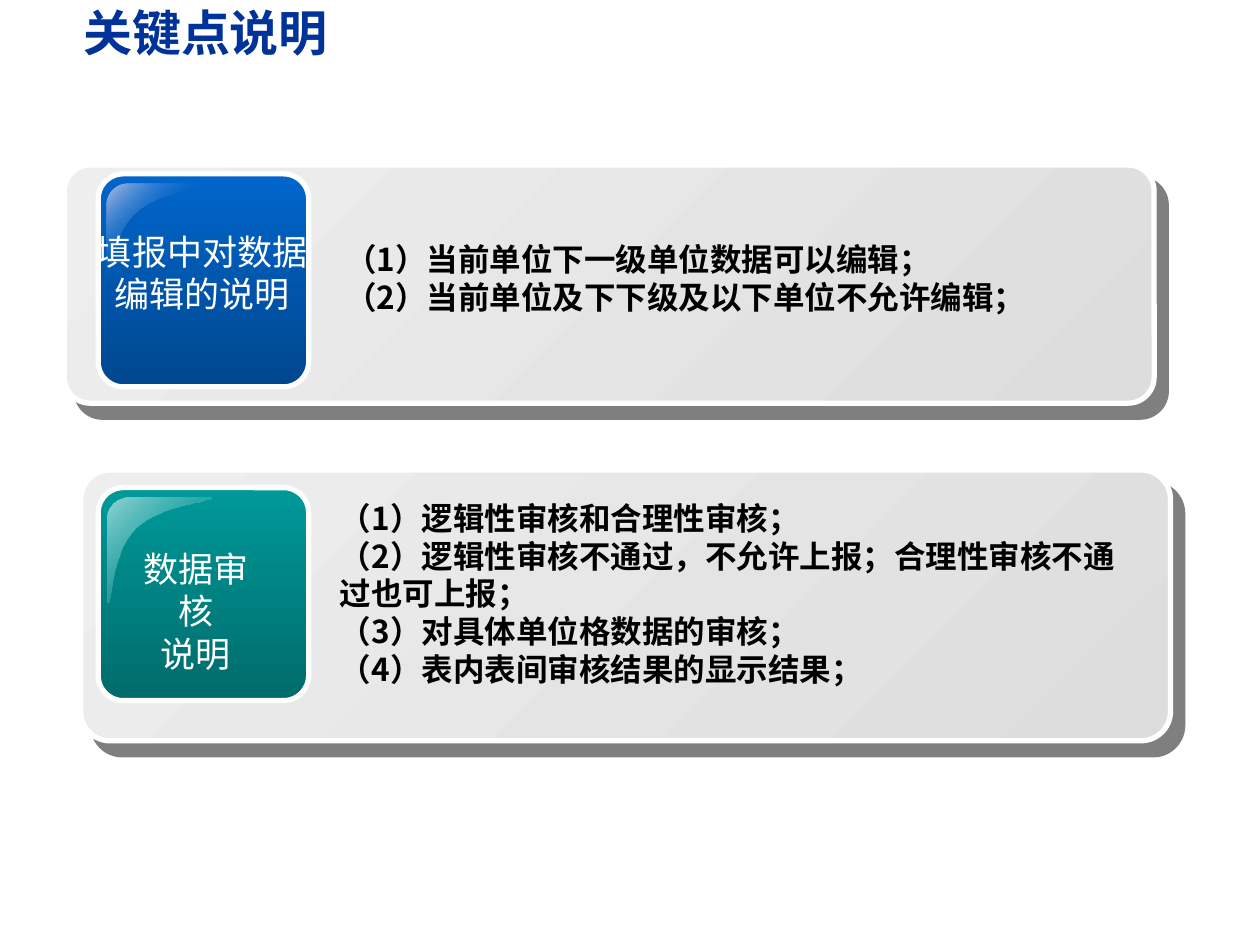
from dataclasses import dataclass

from lxml.etree import SubElement
from pptx import Presentation
from pptx.dml.color import RGBColor
from pptx.enum.shapes import MSO_SHAPE as Preset
from pptx.enum.text import MSO_ANCHOR as Anchor, PP_ALIGN as Align
from pptx.oxml.ns import qn
from pptx.util import Inches, Pt

CJK_FONT = "Noto Sans CJK SC"
TILE_LEFT, TILE_WIDTH, TILE_HEIGHT = 0.78, 1.67, 1.69
GLOSS_LEFT, GLOSS_DROP = 0.85, 0.08
# Highlight outline: a start point, then cubic curves as (control, control, end).
GLOSS_START = (0.17, 0)
GLOSS_CURVES = [
    ((0.08, 0), (0, 0.07), (0, 0.17)),
    ((0, 0.17), (0, 0.83), (0, 0.83)),
    ((0.04, 0.85), (0.02, 0.44), (0.23, 0.24)),
    ((0.44, 0.05), (0.84, 0.04), (0.83, 0)),
]


@dataclass
class TextArea:
    left: float
    top: float
    width: float
    height: float
    lines: list[str]


@dataclass
class Panel:
    left: float
    top: float
    height: float
    tile_top: float
    tile_colors: tuple[str, str]
    gloss_color: str
    gloss_end: float
    label: TextArea
    notes: TextArea


PANELS = [
    Panel(0.51, 1.31, 1.89, 1.38, ("0066CC", "00478E"), "B5C0E5", 0.5,
          TextArea(0.67, 1.78, 1.87, 0.77, ["填报中对数据", "编辑的说明"]),
          TextArea(2.64, 1.86, 6.62, 0.7, [
              "（1）当前单位下一级单位数据可以编辑；",
              "（2）当前单位及下下级及以下单位不允许编辑；"])),
    Panel(0.64, 3.73, 2.15, 3.87, ("009999", "006B6B"), "93D4D4", 1,
          TextArea(0.95, 4.3, 1.21, 0.77, ["数据审核", "说明"]),
          TextArea(2.6, 3.91, 6.47, 1.6, [
              "（1）逻辑性审核和合理性审核；",
              "（2）逻辑性审核不通过，不允许上报；合理性审核不通过也可上报；",
              "（3）对具体单位格数据的审核；",
              "（4）表内表间审核结果的显示结果；"])),
]


def rgb(value: str) -> RGBColor:
    return RGBColor.from_string(value)


def set_gradient(shape, colors: tuple[str, str], angle: float) -> None:
    """Fill from the first colour to the second, angle clockwise in degrees."""
    shape.fill.gradient()
    shape.fill.gradient_angle = 360 - angle
    for stop, color, position in zip(shape.fill.gradient_stops, colors, (0, 1)):
        stop.color.rgb = rgb(color)
        stop.position = position


def add_shadow(shape) -> None:
    effects = SubElement(shape._element.spPr, qn("a:effectLst"))
    shadow = SubElement(effects, qn("a:outerShdw"), dist=str(Pt(10.6)),
                        dir=str(49 * 60000), algn="ctr", rotWithShape="0")
    color = SubElement(shadow, qn("a:srgbClr"), val="000000")
    SubElement(color, qn("a:alpha"), val="50000")


def add_card(page, left: float, top: float, width: float, height: float,
             corner: float, colors: tuple[str, str], angle: float, line: str):
    card = page.shapes.add_shape(Preset.ROUNDED_RECTANGLE, Inches(left), Inches(top),
                                 Inches(width), Inches(height))
    card.adjustments[0] = corner
    set_gradient(card, colors, angle)
    card.line.color.rgb = rgb(line)
    card.line.width = Pt(3)
    return card


def gloss_points(left: float, top: float, steps: int = 16) -> list[tuple[int, int]]:
    """Sample the highlight's curves as points in slide units."""
    points, start = [GLOSS_START], GLOSS_START
    for first, second, end in GLOSS_CURVES:
        for step in range(1, steps + 1):
            t = step / steps
            weights = ((1 - t) ** 3, 3 * t * (1 - t) ** 2, 3 * t * t * (1 - t), t ** 3)
            corners = (start, first, second, end)
            points.append(tuple(sum(w * c[axis] for w, c in zip(weights, corners))
                                for axis in (0, 1)))
        start = end
    return [(Inches(left + x), Inches(top + y)) for x, y in points]


def add_gloss(page, panel: Panel) -> None:
    """Draw the highlight that fades into the tile's upper left corner."""
    points = gloss_points(GLOSS_LEFT, panel.tile_top + GLOSS_DROP)
    builder = page.shapes.build_freeform(*points[0])
    builder.add_line_segments(points[1:], close=True)
    gloss = builder.convert_to_shape()
    set_gradient(gloss, (panel.gloss_color, panel.tile_colors[0]), 45)
    gloss.fill.gradient_stops[1].position = panel.gloss_end
    clear_color = gloss._element.spPr.findall(".//" + qn("a:srgbClr"))[1]
    SubElement(clear_color, qn("a:alpha"), val="0")
    gloss.line.fill.background()
    gloss.shadow.inherit = False


def format_paragraph(para, size: float, color: str, bold: bool, latin: str = CJK_FONT) -> None:
    for span in para.runs:
        font = span.font
        font.name, font.size, font.bold = latin, Pt(size), bold
        font.color.rgb = rgb(color)
        SubElement(span._r.get_or_add_rPr(), qn("a:ea"), typeface=CJK_FONT)


def add_text(page, area: TextArea, size: float, color: str, bold: bool, align: Align) -> None:
    box = page.shapes.add_textbox(Inches(area.left), Inches(area.top),
                                  Inches(area.width), Inches(area.height))
    frame = box.text_frame
    frame.word_wrap = True
    frame.text = "\n".join(area.lines)
    for para in frame.paragraphs:
        para.alignment = align
        format_paragraph(para, size, color, bold)


def add_panel(page, panel: Panel) -> None:
    back = add_card(page, panel.left, panel.top, 8.65, panel.height, 0.109,
                    ("EEEEEE", "DDDDDD"), 45, "FFFFFF")
    add_shadow(back)
    tile = add_card(page, TILE_LEFT, panel.tile_top, TILE_WIDTH, TILE_HEIGHT, 0.119,
                    panel.tile_colors, 90, "FEFEFE")
    tile.shadow.inherit = False
    add_gloss(page, panel)
    add_text(page, panel.label, 20, "FFFFFF", False, Align.CENTER)
    add_text(page, panel.notes, 18, "000000", True, Align.LEFT)


def set_title(page, text: str) -> None:
    title = page.shapes.title
    title.left, title.top = Inches(0.62), Inches(-0.11)
    title.width, title.height = Inches(9.34), Inches(0.72)
    frame = title.text_frame
    frame.margin_left = frame.margin_right = Inches(0.04)
    frame.margin_top = frame.margin_bottom = Inches(0.04)
    frame.vertical_anchor = Anchor.MIDDLE
    frame.text = text
    frame.paragraphs[0].alignment = Align.LEFT
    format_paragraph(frame.paragraphs[0], 28, "003399", True, "Arial")


def main() -> None:
    deck = Presentation()
    deck.slide_width, deck.slide_height = Inches(10), Inches(7.5)
    page = deck.slides.add_slide(deck.slide_layouts[5])
    set_title(page, "关键点说明")
    for panel in PANELS:
        add_panel(page, panel)
    deck.save("out.pptx")


if __name__ == "__main__":
    main()
